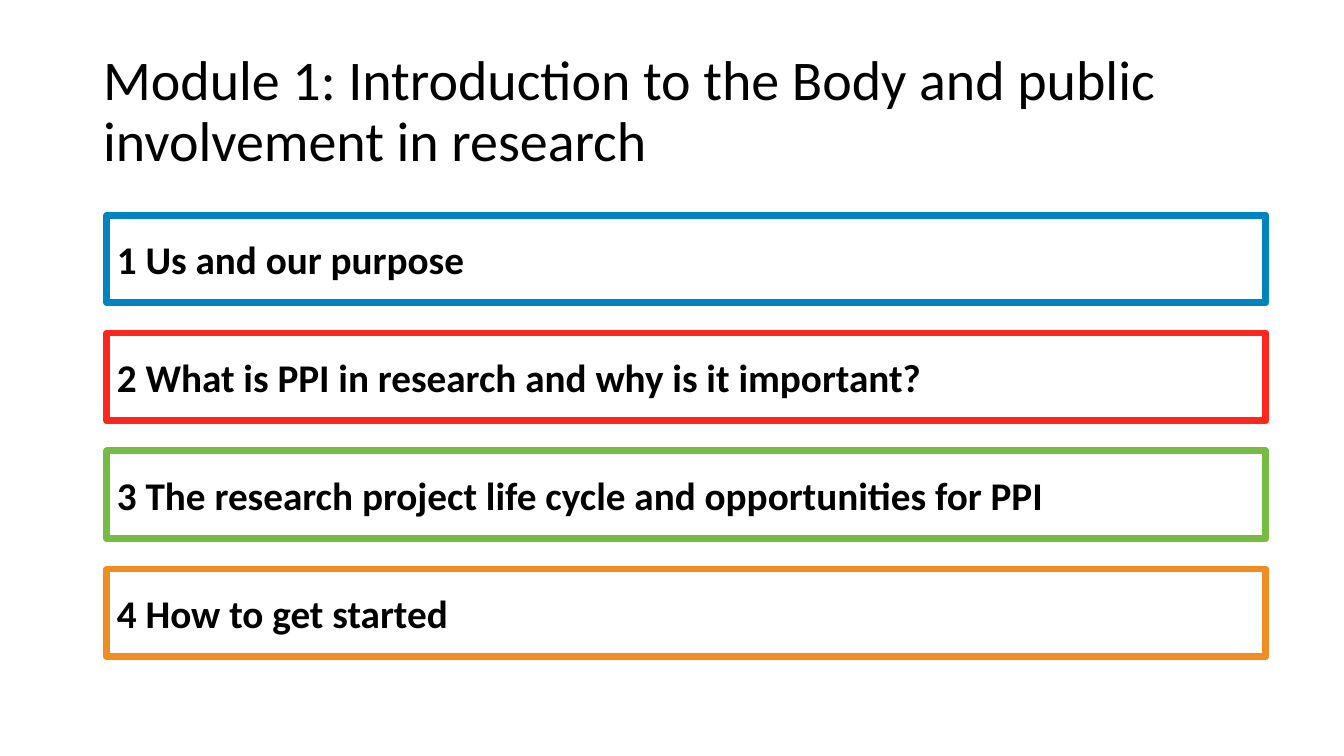
from pptx import Presentation
from pptx.dml.color import RGBColor
from pptx.enum.shapes import MSO_SHAPE as Shape
from pptx.enum.text import MSO_ANCHOR as Anchor, MSO_AUTO_SIZE as AutoSize, PP_ALIGN as Align
from pptx.util import Emu, Pt

# Content
TITLE = "Module 1: Introduction to the Body and public involvement in research"
SECTIONS = [
    ("1 Us and our purpose", "0083BF"),
    ("2 What is PPI in research and why is it important?", "FF261C"),
    ("3 The research project life cycle and opportunities for PPI", "76BC43"),
    ("4 How to get started", "F08C21"),
]

# Layout in px
SLIDE_SIZE = (1344, 756)
TITLE_AREA = (93, 40, 1159, 146)
BOX_LEFT, BOX_TOP, BOX_WIDTH, BOX_HEIGHT = 107, 215, 1159, 88
BOX_PITCH = 118


def px(length):
    return Emu(round(length * 914400 / 100.8))


def color(value):
    return RGBColor.from_string(value)


def place(shape, left, top, width, height):
    shape.left, shape.top = px(left), px(top)
    shape.width, shape.height = px(width), px(height)


def write(shape, text, size, bold=False):
    frame = shape.text_frame
    frame.word_wrap = True
    frame.auto_size = AutoSize.NONE
    frame.vertical_anchor = Anchor.MIDDLE
    para = frame.paragraphs[0]
    para.alignment = Align.LEFT
    span = para.add_run()
    span.text = text
    span.font.name = "Calibri"
    span.font.size = Pt(size)
    span.font.bold = bold
    span.font.color.rgb = color("000000")
    return para


def main():
    deck = Presentation()
    deck.slide_width, deck.slide_height = map(px, SLIDE_SIZE)
    page = deck.slides.add_slide(deck.slide_layouts[5])

    # Title
    title = page.shapes.title
    place(title, *TITLE_AREA)
    write(title, TITLE, 40).line_spacing = 0.9

    # Outlined section boxes, evenly stacked
    for row, (text, outline) in enumerate(SECTIONS):
        top = BOX_TOP + row * BOX_PITCH
        area = map(px, (BOX_LEFT, top, BOX_WIDTH, BOX_HEIGHT))
        box = page.shapes.add_shape(Shape.RECTANGLE, *area)
        box.shadow.inherit = False
        box.fill.background()
        box.line.color.rgb = color(outline)
        box.line.width = Pt(5)
        write(box, text, 28, bold=True)

    deck.save("out.pptx")


if __name__ == "__main__":
    main()
